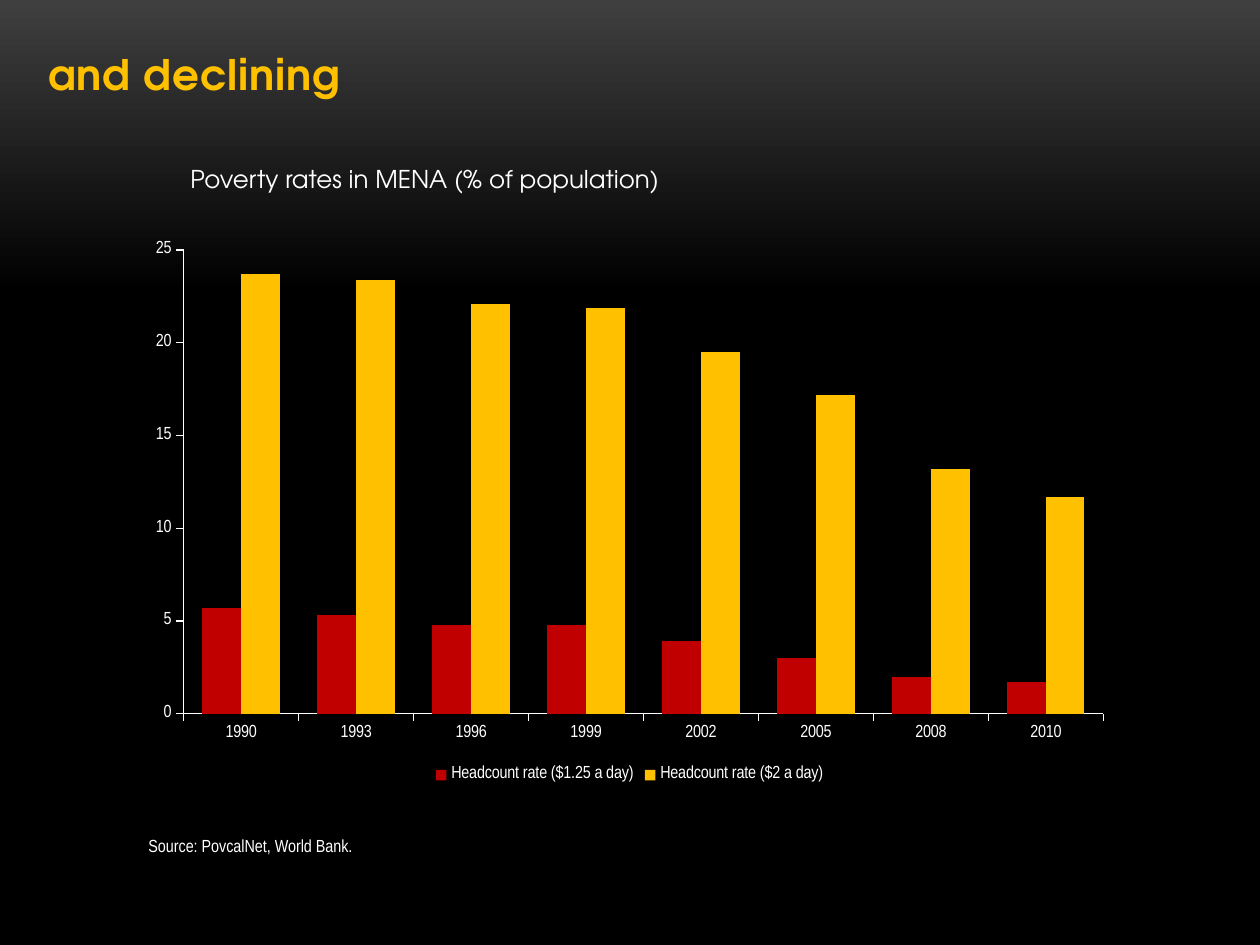
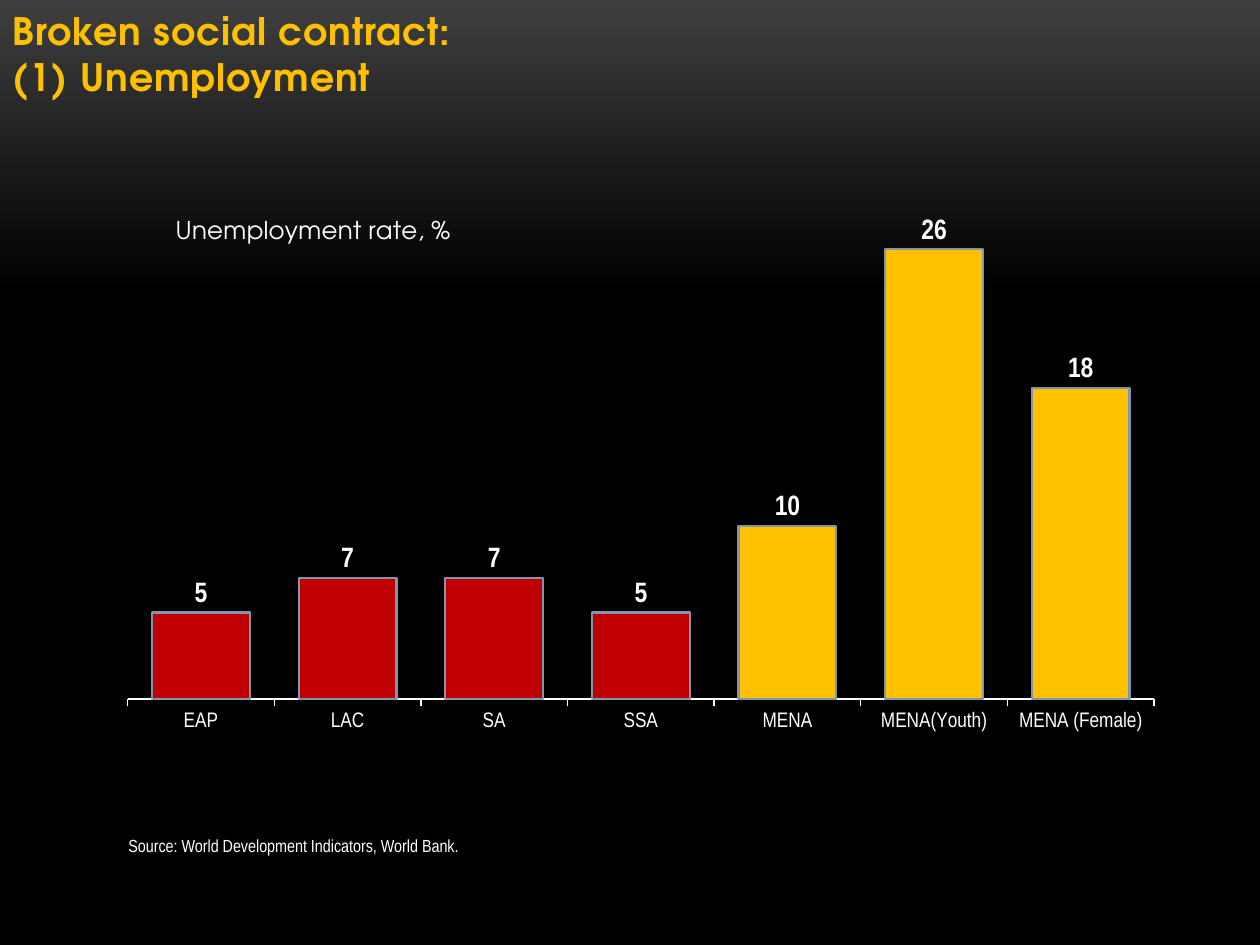
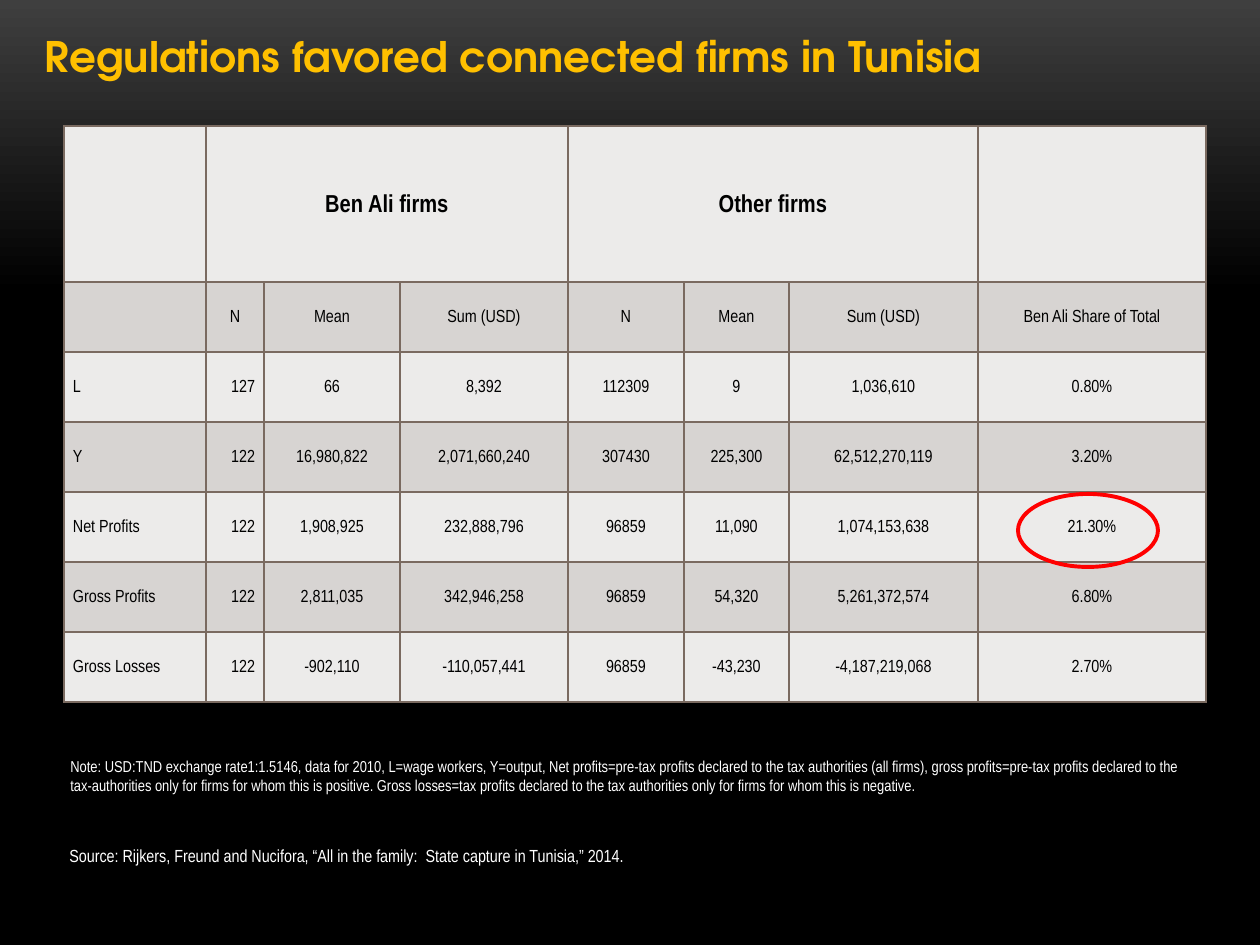
from copy import deepcopy

from pptx import Presentation
from pptx.chart.data import CategoryChartData
from pptx.dml.color import RGBColor
from pptx.enum.chart import XL_CHART_TYPE as ChartType
from pptx.enum.chart import XL_LABEL_POSITION as LabelPos
from pptx.enum.chart import XL_LEGEND_POSITION as LegendPos
from pptx.enum.chart import XL_TICK_LABEL_POSITION as TickLabels
from pptx.enum.chart import XL_TICK_MARK as TickMark
from pptx.enum.shapes import MSO_SHAPE as Shape
from pptx.enum.text import MSO_ANCHOR as Anchor
from pptx.enum.text import MSO_AUTO_SIZE as AutoSize
from pptx.enum.text import PP_ALIGN as Align
from pptx.oxml import parse_xml
from pptx.oxml.ns import nsdecls, qn
from pptx.util import Pt

# Shared look
EMU_PER_PX = 914400 / 126
GOLD = RGBColor(0xFF, 0xC0, 0x00)
CRIMSON = RGBColor(0xC0, 0x00, 0x00)
RED = RGBColor(0xFF, 0x00, 0x00)
WHITE = RGBColor(0xFF, 0xFF, 0xFF)
BLACK = RGBColor(0x00, 0x00, 0x00)
CHARCOAL = RGBColor(0x3F, 0x3F, 0x3F)
STEEL = RGBColor(0x7E, 0x97, 0xAD)
LIGHT_ROW = RGBColor(0xEC, 0xEB, 0xEA)
DARK_ROW = RGBColor(0xD7, 0xD4, 0xD2)
TABLE_RULE = RGBColor(0x7A, 0x6A, 0x60)
HEADING_FONT = "TeX Gyre Adventor"
BODY_FONT = "Arial Narrow"

# Slide content
YEARS = ["1990", "1993", "1996", "1999", "2002", "2005", "2008", "2010"]
POVERTY = {
    "Headcount rate ($1.25 a day)": (CRIMSON, [5.7, 5.3, 4.8, 4.8, 3.9, 3, 2, 1.7]),
    "Headcount rate ($2 a day)": (GOLD, [23.7, 23.4, 22.1, 21.9, 19.5, 17.2, 13.2, 11.7]),
}
UNEMPLOYMENT = {"EAP": 5, "LAC": 7, "SA": 7, "SSA": 5,
                "MENA": 10, "MENA(Youth)": 26, "MENA (Female)": 18}
FIRM_COLUMNS = [142, 58, 136, 168, 116, 105, 189, 228]
FIRM_ROWS = [156] + [70] * 6
FIRMS = [
    ["", "Ben Ali firms", "", "", "Other firms", "", "", ""],
    ["", "N", "Mean", "Sum (USD)", "N", "Mean", "Sum (USD)", "Ben Ali Share of Total"],
    ["L", "127", "66", "8,392", "112309", "9", "1,036,610", "0.80%"],
    ["Y", "122", "16,980,822", "2,071,660,240", "307430", "225,300", "62,512,270,119", "3.20%"],
    ["Net Profits", "122", "1,908,925", "232,888,796", "96859", "11,090", "1,074,153,638",
     "21.30%"],
    ["Gross Profits", "122", "2,811,035", "342,946,258", "96859", "54,320", "5,261,372,574",
     "6.80%"],
    ["Gross Losses", "122", "-902,110", "-110,057,441", "96859", "-43,230", "-4,187,219,068",
     "2.70%"],
]
FIRMS_NOTE = (
    "Note: USD:TND exchange rate1:1.5146, data for 2010, L=wage workers, Y=output, "
    "Net profits=pre-tax profits declared to the tax authorities (all firms), "
    "gross profits=pre-tax profits declared to the tax-authorities only for firms for whom "
    "this is positive. Gross losses=tax profits declared to the tax authorities only for "
    "firms for whom this is negative."
)


def px(length):
    return round(length * EMU_PER_PX)


def box(*lengths):
    return [px(length) for length in lengths]


def style_font(font, size, color=WHITE, name=BODY_FONT, bold=False):
    font.size, font.name, font.bold = Pt(size), name, bold
    font.color.rgb = color


def write_text(frame, text, size=10, color=WHITE, font=BODY_FONT, bold=False,
               align=Align.LEFT, line_spacing=None, tracking=None):
    paragraph = frame.paragraphs[0]
    paragraph.text = text
    paragraph.alignment = align
    if line_spacing:
        paragraph.line_spacing = line_spacing
    for run in paragraph.runs:
        style_font(run.font, size, color, font, bold)
        if tracking:
            run.font._element.set("spc", str(tracking))
    # Line breaks take the size of the text around them
    for line_break in paragraph._p.findall(qn("a:br")):
        line_break.append(deepcopy(paragraph.runs[0].font._element))


def paint_background(master):
    fill = master.background.fill
    fill.gradient()
    fill.gradient_angle = 270
    for stop, color, position in zip(fill.gradient_stops, (CHARCOAL, BLACK), (0, 0.31)):
        stop.color.rgb = color
        stop.position = position


def add_titled_slide(deck, text, area, indent=13, anchor=Anchor.BOTTOM, **text_format):
    slide = deck.slides.add_slide(deck.slide_layouts[5])
    title = slide.shapes.title
    title.left, title.top, title.width, title.height = box(*area)
    frame = title.text_frame
    frame.auto_size = AutoSize.NONE
    frame.vertical_anchor = anchor
    frame.margin_left = px(indent)
    write_text(frame, text, color=GOLD, font=HEADING_FONT, bold=True, **text_format)
    return slide


def add_caption(slide, text, area, wrap=True, **text_format):
    frame = slide.shapes.add_textbox(*box(*area)).text_frame
    frame.word_wrap = wrap
    write_text(frame, text, **text_format)


def style_bar(bar_format, color, outline=None):
    bar_format.fill.solid()
    bar_format.fill.fore_color.rgb = color
    if outline:
        bar_format.line.color.rgb = outline
        bar_format.line.width = Pt(1.25)


def add_column_chart(slide, area, categories, series, gap):
    """series maps a name to its colour and values."""
    data = CategoryChartData()
    data.categories = categories
    for name, (_, values) in series.items():
        data.add_series(name, values)
    chart = slide.shapes.add_chart(ChartType.COLUMN_CLUSTERED, *box(*area), data).chart
    style_font(chart.font, 10)
    chart.has_title = chart.has_legend = False
    plot = chart.plots[0]
    plot.gap_width, plot.overlap, plot.vary_by_categories = gap, 0, False
    for bars, (color, _) in zip(plot.series, series.values()):
        style_bar(bars.format, color)
        bars.invert_if_negative = False
    for axis in (chart.category_axis, chart.value_axis):
        axis.has_major_gridlines = False
        axis.major_tick_mark = TickMark.OUTSIDE
        axis.minor_tick_mark = TickMark.NONE
        axis.format.line.color.rgb = WHITE
    return chart


def place_in_chart(element, index, target=None, **fractions):
    """Give a chart title or plot area a fixed place, in fractions of the chart."""
    for automatic in element.findall(qn("c:layout")):
        element.remove(automatic)
    parts = f'<c:layoutTarget val="{target}"/>' if target else ""
    parts += '<c:xMode val="edge"/><c:yMode val="edge"/>'
    parts += "".join(f'<c:{key} val="{value}"/>' for key, value in fractions.items())
    element.insert(index, parse_xml(
        f'<c:layout {nsdecls("c")}><c:manualLayout>{parts}</c:manualLayout></c:layout>'))


def rule_cell(cell):
    for index, side in enumerate(("lnL", "lnR", "lnT", "lnB")):
        cell._tc.get_or_add_tcPr().insert(index, parse_xml(
            f'<a:{side} {nsdecls("a")} w="12700"><a:solidFill>'
            f'<a:srgbClr val="{TABLE_RULE}"/></a:solidFill></a:{side}>'))


def firm_cell_align(row, column):
    if row > 1 and column < 2:
        return (Align.JUSTIFY, Align.RIGHT)[column]
    return Align.CENTER


def add_firm_table(slide, left, top):
    area = box(left, top, sum(FIRM_COLUMNS), sum(FIRM_ROWS))
    table = slide.shapes.add_table(len(FIRMS), len(FIRM_COLUMNS), *area).table
    for column, width in zip(table.columns, FIRM_COLUMNS):
        column.width = px(width)
    for row, height in zip(table.rows, FIRM_ROWS):
        row.height = px(height)
    for r, texts in enumerate(FIRMS):
        for c, text in enumerate(texts):
            cell = table.cell(r, c)
            cell.fill.solid()
            cell.fill.fore_color.rgb = DARK_ROW if r % 2 else LIGHT_ROW
            rule_cell(cell)
            cell.vertical_anchor = Anchor.MIDDLE
            cell.margin_left = cell.margin_right = px(9)
            cell.margin_top = cell.margin_bottom = 0
            if text:
                write_text(cell.text_frame, text, size=10 if r else 14, color=BLACK,
                           bold=r == 0, align=firm_cell_align(r, c), line_spacing=1.15)
    for first in (1, 4):
        table.cell(0, first).merge(table.cell(0, first + 2))


def add_ring(slide, area):
    ring = slide.shapes.add_shape(Shape.OVAL, *box(*area))
    ring.shadow.inherit = False
    ring.fill.background()
    ring.line.color.rgb = RED
    ring.line.width = Pt(2.25)


def build_poverty_slide(deck):
    slide = add_titled_slide(deck, "and declining", (0, 32, 1260, 73), indent=48,
                             size=24, tracking=50)
    add_caption(slide, "Poverty rates in MENA (% of population)", (42, 158, 766, 43),
                size=14, font=HEADING_FONT, align=Align.CENTER)
    chart = add_column_chart(slide, (136, 231, 987, 557), YEARS, POVERTY, gap=97)
    chart.has_legend = True
    chart.legend.position = LegendPos.BOTTOM
    chart.legend.include_in_layout = False
    add_caption(slide, "Source: PovcalNet, World Bank.", (136, 829, 232, 34), wrap=False)


def build_unemployment_slide(deck):
    slide = add_titled_slide(deck, "Broken social contract:\v(1) Unemployment",
                             (0, 32, 1260, 73), size=21.6, tracking=50)
    rates = {"Series 1": (CRIMSON, list(UNEMPLOYMENT.values()))}
    chart = add_column_chart(slide, (84, 105, 1092, 683), list(UNEMPLOYMENT), rates, gap=50)

    # Regions in red, MENA groups in gold
    bars = chart.plots[0].series[0]
    for index, region in enumerate(UNEMPLOYMENT):
        color = GOLD if region.startswith("MENA") else CRIMSON
        style_bar(bars.points[index].format, color, outline=STEEL)
    labels = bars.data_labels
    labels.show_value = True
    labels.position = LabelPos.OUTSIDE_END
    style_font(labels.font, 16, bold=True)

    # Axes
    regions, scale = chart.category_axis, chart.value_axis
    regions.tick_label_position = TickLabels.LOW
    style_font(regions.tick_labels.font, 12)
    scale.minimum_scale, scale.maximum_scale, scale.major_unit = 0, 30, 5
    scale.tick_label_position = TickLabels.NONE
    scale.format.line.fill.background()

    # Title and plot places
    chart.has_title = True
    write_text(chart.chart_title.text_frame, "Unemployment rate, %", size=14,
               font=HEADING_FONT)
    place_in_chart(chart.chart_title._element, 1, x=0.08, y=0.16)
    place_in_chart(chart._chartSpace.chart.plotArea, 0, target="inner",
                   x=0.04, y=0.11, w=0.94, h=0.76)
    add_caption(slide, "Source: World Development Indicators, World Bank.",
                (116, 829, 359, 34), wrap=False)


def build_firms_slide(deck):
    slide = add_titled_slide(deck, "Regulations favored connected firms in Tunisia",
                             (0, 24, 1260, 102), indent=45, anchor=Anchor.TOP, size=24)
    add_firm_table(slide, 64, 126)
    add_caption(slide, FIRMS_NOTE, (58, 751, 1147, 89), size=9)
    add_caption(slide, "Source: Rijkers, Freund and Nucifora, “All in the family:  "
                "State capture in Tunisia,” 2014.", (57, 839, 1102, 34))
    add_ring(slide, (1018, 494, 140, 73))


def main():
    deck = Presentation()
    deck.slide_width, deck.slide_height = box(1260, 945)
    paint_background(deck.slide_master)
    build_poverty_slide(deck)
    build_unemployment_slide(deck)
    build_firms_slide(deck)
    deck.save("out.pptx")


if __name__ == "__main__":
    main()
